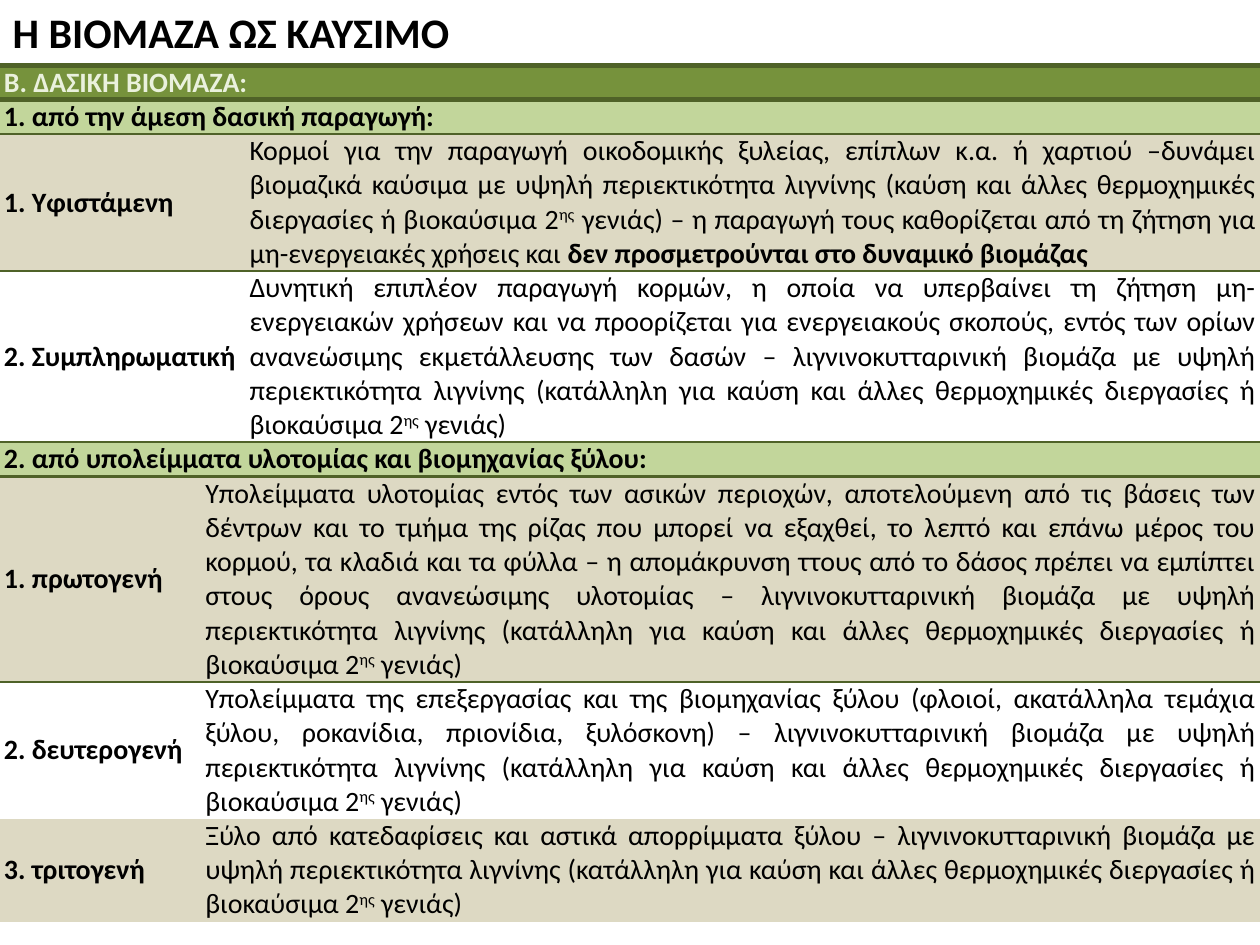
from lxml import etree
from pptx import Presentation
from pptx.dml.color import RGBColor
from pptx.enum.text import MSO_ANCHOR, PP_ALIGN
from pptx.oxml import parse_xml
from pptx.oxml.ns import nsdecls, qn
from pptx.util import Cm, Pt

LEFT, JUSTIFY = PP_ALIGN.LEFT, PP_ALIGN.JUSTIFY
TOP, MIDDLE = MSO_ANCHOR.TOP, MSO_ANCHOR.MIDDLE

BLACK = RGBColor(0x00, 0x00, 0x00)
PALE_GREEN = RGBColor(0xEA, 0xF1, 0xDD)
GREEN = RGBColor(0x76, 0x92, 0x3C)
LIGHT_GREEN = RGBColor(0xC2, 0xD6, 0x9B)
DARK_GREEN = RGBColor(0x4F, 0x62, 0x28)
BEIGE = RGBColor(0xDD, 0xD9, 0xC3)

FONT = "Calibri"
TEXT_SIZE = 16
LINE_HEIGHT = 0.67
COLUMN_WIDTHS = (3.76, 0.3, 0.89, 20.45)
LAST_COLUMN = len(COLUMN_WIDTHS) - 1
NO_STYLE_NO_GRID = "{2D5ABB26-0587-4C30-8999-92F81FD0307C}"
THICK, THIN = 3, 1.5

LIGNIN = "βιομάζα με υψηλή περιεκτικότητα λιγνίνης "
SUITABLE = ("– λιγνινοκυτταρινική " + LIGNIN +
            "(κατάλληλη για καύση και άλλες θερμοχημικές διεργασίες ή βιοκαύσιμα 2")
GENERATION = ("ης", "sup")

EXISTING = [
    ("Κορμοί για την παραγωγή οικοδομικής ξυλείας, επίπλων κ.α. ή χαρτιού –δυνάμει "
     "βιομαζικά καύσιμα με υψηλή περιεκτικότητα λιγνίνης (καύση και άλλες "
     "θερμοχημικές διεργασίες ή βιοκαύσιμα 2", ""),
    GENERATION,
    (" γενιάς) – η παραγωγή τους καθορίζεται από τη ζήτηση για μη-ενεργειακές "
     "χρήσεις και ", ""),
    ("δεν προσμετρούνται στο δυναμικό βιομάζας ", "bold"),
]


def suitable_biomass(source):
    """Runs for a biomass source followed by the shared suitability note."""
    return [(source + SUITABLE, ""), GENERATION, (" γενιάς)", "")]


ADDITIONAL = suitable_biomass(
    "Δυνητική επιπλέον παραγωγή κορμών, η οποία να υπερβαίνει τη ζήτηση "
    "μη-ενεργειακών χρήσεων και να προορίζεται για ενεργειακούς σκοπούς, εντός των "
    "ορίων ανανεώσιμης εκμετάλλευσης των δασών ")
PRIMARY = suitable_biomass(
    "Υπολείμματα υλοτομίας εντός των ασικών περιοχών, αποτελούμενη από τις βάσεις "
    "των δέντρων και το τμήμα της ρίζας που μπορεί να εξαχθεί, το λεπτό και επάνω "
    "μέρος του κορμού, τα κλαδιά και τα φύλλα – η απομάκρυνση ττους από το δάσος "
    "πρέπει να εμπίπτει στους όρους ανανεώσιμης υλοτομίας ")
SECONDARY = suitable_biomass(
    "Υπολείμματα της επεξεργασίας και της βιομηχανίας ξύλου (φλοιοί, ακατάλληλα "
    "τεμάχια ξύλου, ροκανίδια, πριονίδια, ξυλόσκονη) ")
TERTIARY = suitable_biomass("Ξύλο από κατεδαφίσεις και αστικά απορρίμματα ξύλου ")

# lines of text, label, body runs, first body column, fill, top and bottom border
ROWS = [
    (1, "Β. ΔΑΣΙΚΗ ΒΙΟΜΑΖΑ:", None, None, GREEN, THICK, THICK),
    (1, "1. από την άμεση δασική παραγωγή:", None, None, LIGHT_GREEN, THICK, THIN),
    (4, "1. Υφιστάμενη", EXISTING, 3, BEIGE, THIN, None),
    (5, "2. Συμπληρωματική", ADDITIONAL, 3, None, None, THIN),
    (1, "2. από υπολείμματα υλοτομίας και βιομηχανίας ξύλου:", None, None,
     LIGHT_GREEN, THIN, THIN),
    (6, "1. πρωτογενή", PRIMARY, 2, BEIGE, THIN, None),
    (4, "2. δευτερογενή", SECONDARY, 2, None, None, None),
    (3, "3. τριτογενή", TERTIARY, 2, BEIGE, None, None),
    (1, "", [], 2, None, None, THICK),
]


def add_run(p, text, size, color=BLACK, style=""):
    r = p.add_run()
    r.text = text
    font = r.font
    font.name, font.size, font.bold = FONT, Pt(size), style == "bold"
    font.color.rgb = color
    if style == "sup":
        font._element.set("baseline", "30000")


def add_border(cell, tag, width):
    line = parse_xml(
        f'<a:{tag} {nsdecls("a")} w="{Pt(width)}"><a:solidFill>'
        f'<a:srgbClr val="{DARK_GREEN}"/></a:solidFill></a:{tag}>')
    cell._tc.get_or_add_tcPr().insert(0, line)


def format_cell(cell, fill, top, bottom):
    cell.margin_left = cell.margin_right = Cm(0.08)
    cell.margin_top = cell.margin_bottom = 0
    if fill is None:
        cell.fill.background()
    else:
        cell.fill.solid()
        cell.fill.fore_color.rgb = fill
    # Borders go in bottom first, since the schema wants the top one in front.
    for tag, width in (("lnB", bottom), ("lnT", top)):
        if width:
            add_border(cell, tag, width)
    end = etree.SubElement(cell.text_frame.paragraphs[0]._p, qn("a:endParaRPr"))
    end.set("sz", str(TEXT_SIZE * 100))


def write_cell(cell, runs, align, anchor, color=BLACK):
    cell.vertical_anchor = anchor
    p = cell.text_frame.paragraphs[0]
    p.alignment = align
    for text, style in runs:
        add_run(p, text, TEXT_SIZE, color, style)


def fill_row(table, i, row):
    _, label, body, body_column, fill, top, bottom = row
    for j in range(LAST_COLUMN + 1):
        format_cell(table.cell(i, j), fill, top, bottom)
    first, last = table.cell(i, 0), table.cell(i, LAST_COLUMN)
    label_runs = [(label, "bold")] if label else []
    if body is None:
        first.merge(last)
        if i == 0:
            write_cell(first, label_runs, LEFT, MIDDLE, PALE_GREEN)
        else:
            write_cell(first, label_runs, JUSTIFY, TOP)
        return
    body_cell = table.cell(i, body_column)
    if body_column == LAST_COLUMN:
        first.merge(table.cell(i, body_column - 1))
    else:
        body_cell.merge(last)
    write_cell(first, label_runs, LEFT, MIDDLE)
    write_cell(body_cell, body, JUSTIFY, TOP)


def add_biomass_table(s):
    heights = [Cm(row[0] * LINE_HEIGHT) for row in ROWS]
    frame = s.shapes.add_table(len(ROWS), len(COLUMN_WIDTHS), 0, Cm(1.32),
                               Cm(25.4), sum(heights))
    table = frame.table
    table.first_row = table.horz_banding = False
    table._tbl.tblPr.find(qn("a:tableStyleId")).text = NO_STYLE_NO_GRID
    for column, width in zip(table.columns, COLUMN_WIDTHS):
        column.width = Cm(width)
    for i, row in enumerate(ROWS):
        table.rows[i].height = heights[i]
        fill_row(table, i, row)


def add_title(s, text):
    sp = s.shapes.title
    sp.left, sp.top, sp.width, sp.height = 0, 0, Cm(25.4), Cm(1.28)
    tf = sp.text_frame
    tf.vertical_anchor = TOP
    p = tf.paragraphs[0]
    p.alignment = LEFT
    add_run(p, text, 24, style="bold")


def main():
    prs = Presentation()
    prs.slide_width, prs.slide_height = Cm(25.4), Cm(19.05)
    s = prs.slides.add_slide(prs.slide_layouts[5])
    add_title(s, "Η ΒΙΟΜΑΖΑ ΩΣ ΚΑΥΣΙΜΟ")
    add_biomass_table(s)
    prs.save("out.pptx")


if __name__ == "__main__":
    main()
